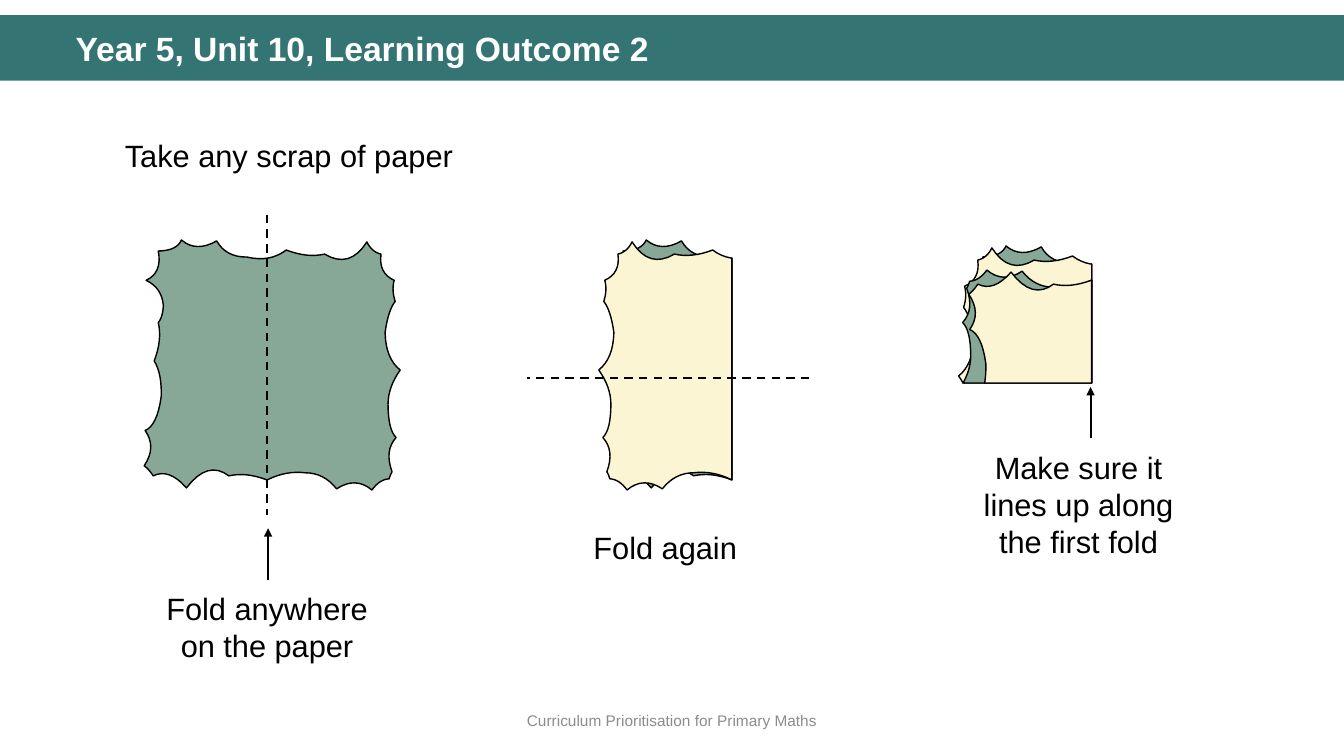
import lxml.etree
import pptx
import pptx.dml.color
import pptx.enum.dml
import pptx.enum.shapes
import pptx.enum.text
import pptx.oxml
import pptx.oxml.ns
import pptx.util

Pt = pptx.util.Pt
ALIGN = pptx.enum.text.PP_ALIGN
FONT = "Arial"
BLACK, WHITE, TEAL, GREY = "000000", "FFFFFF", "347574", "8C8C8C"
GREEN, CREAM = "87A896", "FBF5D4"
SLIDE_W, SLIDE_H = 960, 540
FOLD_X, FOLD_Y = 87.8, 97.9

# Torn edge, clockwise: (corner x, corner y, middle of the arc to the next corner x, y)
TORN_EDGE = [
    (26.6, 0, 38.2, 4.7), (51.8, 0.7, 60.5, 9.4), (73.4, 12.2, 88.6, 12.9),
    (101.5, 7.2, 115.9, 10.8), (128.9, 10.1, 145.4, 13.3), (159.1, 1.4, 163.4, 7.2),
    (169.2, 10.1, 170.6, 21.6), (178.6, 28.8, 177.8, 36), (179.3, 43.9, 175, 52.6),
    (172.1, 66.2, 175, 82.1), (182.9, 92.9, 176.4, 105.1), (174.2, 117.4, 175.7, 132.5),
    (180, 141.1, 175, 151.9), (177.1, 165.6, 176, 167.8), (175, 170.6, 168.5, 172.8),
    (162.7, 178.6, 150.5, 173.5), (137.5, 177.8, 127.4, 169.2), (115.2, 166.3, 101.5, 166.7),
    (87.8, 171.4, 73.4, 167.8), (60.5, 168.5, 45.4, 164.9), (30.2, 177.1, 18, 167.8),
    (6.5, 168.5, 3.2, 164.2), (0, 161.3, 4.7, 148.3), (0.7, 136.1, 7.9, 128.2),
    (12.2, 111.6, 11.2, 97.2), (7.2, 86.4, 10.8, 72), (10.1, 59, 12.6, 54),
    (13.7, 46.8, 10.1, 36), (1.4, 28.8, 9.4, 20.9), (10.1, 7.9, 20.9, 5.8),
]


def rgb(hex_colour):
    return pptx.dml.color.RGBColor.from_string(hex_colour)


def torn_outline(steps=8):
    """Return the points of the whole scrap, with each arc cut into short lines."""
    points = []
    for (ax, ay, mx, my), (bx, by, *_) in zip(TORN_EDGE, TORN_EDGE[1:] + TORN_EDGE[:1]):
        cx, cy = 2 * mx - (ax + bx) / 2, 2 * my - (ay + by) / 2
        for i in range(steps):
            t = i / steps
            u = 1 - t
            points.append((u * u * ax + 2 * u * t * cx + t * t * bx,
                           u * u * ay + 2 * u * t * cy + t * t * by))
    return points


def cut(points, axis, at, side):
    """Keep the part below (side -1) or above (side 1) the value at on an axis."""
    kept = []
    for a, b in zip(points, points[1:] + points[:1]):
        da, db = side * (a[axis] - at), side * (b[axis] - at)
        if da >= 0:
            kept.append(a)
        if da * db < 0:
            t = da / (da - db)
            kept.append(tuple(p + t * (q - p) for p, q in zip(a, b)))
    return kept


def flip(points, axis, at):
    return [tuple(2 * at - v if i == axis else v for i, v in enumerate(p)) for p in points]


def add_paper(slide, x, y, points, colour):
    path = [(Pt(x + px), Pt(y + py)) for px, py in points]
    builder = slide.shapes.build_freeform(*path[0])
    builder.add_line_segments(path[1:], close=True)
    sp = builder.convert_to_shape()
    sp.shadow.inherit = False
    sp.fill.solid()
    sp.fill.fore_color.rgb = rgb(colour)
    sp.line.color.rgb = rgb(BLACK)
    sp.line.width = Pt(1)


def add_line(slide, x1, y1, x2, y2):
    line = slide.shapes.add_connector(
        pptx.enum.shapes.MSO_CONNECTOR.STRAIGHT, Pt(x1), Pt(y1), Pt(x2), Pt(y2))
    line.line.color.rgb = rgb(BLACK)
    line.line.width = Pt(1.5)
    lxml.etree.SubElement(line._element.spPr, pptx.oxml.ns.qn("a:effectLst"))
    return line


def add_fold_line(slide, x1, y1, x2, y2):
    line = add_line(slide, x1, y1, x2, y2)
    line.line.dash_style = pptx.enum.dml.MSO_LINE.DASH


def add_arrow_up(slide, x, y, length=36.7):
    arrow = add_line(slide, x, y, x, y - length)
    ln = arrow.line._get_or_add_ln()
    lxml.etree.SubElement(ln, pptx.oxml.ns.qn("a:tailEnd"), type="triangle")


def add_text(slide, x, y, w, h, text, size=22, colour=BLACK, align=ALIGN.CENTER):
    tf = slide.shapes.add_textbox(Pt(x), Pt(y), Pt(w), Pt(h)).text_frame
    tf.word_wrap = True
    p = tf.paragraphs[0]
    p.text = text
    p.alignment = align
    p.font.name, p.font.size, p.font.color.rgb = FONT, Pt(size), rgb(colour)
    return tf


def add_header(slide, x, y, w, h):
    title = slide.shapes.title
    band = slide.shapes.add_shape(
        pptx.enum.shapes.MSO_SHAPE.RECTANGLE, Pt(x), Pt(y), Pt(w), Pt(h))
    band.shadow.inherit = False
    band.fill.solid()
    band.fill.fore_color.rgb = rgb(TEAL)
    band.line.fill.background()
    title._element.addprevious(band._element)

    title.left, title.top = Pt(x + 46.8), Pt(y + 8.6)
    title.width, title.height = Pt(w - 73), Pt(33.8)
    tf = title.text_frame
    tf.auto_size = pptx.enum.text.MSO_AUTO_SIZE.NONE
    tf.vertical_anchor = pptx.enum.text.MSO_ANCHOR.TOP
    p = tf.paragraphs[0]
    p.text = "Year 5, Unit 10, Learning Outcome 2"
    p.alignment = ALIGN.LEFT
    p.line_spacing = 0.9
    p.font.name, p.font.size, p.font.bold = FONT, Pt(24), True
    p.font.color.rgb = rgb(WHITE)


def add_flat_scrap(slide, x, y, scrap):
    add_text(slide, x - 20.9, y - 77.1, 279.4, 33.8, "Take any scrap of paper", align=ALIGN.LEFT)
    add_paper(slide, x, y, scrap, GREEN)
    add_fold_line(slide, x + FOLD_X, y - 18, x + FOLD_X, y + 196.5)
    add_arrow_up(slide, x + 88.5, y + 242.6)
    add_text(slide, x + 8.6, y + 246.2, 158.4, 87.1, "Fold anywhere on the paper")


def add_first_fold(slide, x, y, back, front):
    add_paper(slide, x, y, back, GREEN)
    add_paper(slide, x, y, front, CREAM)
    add_fold_line(slide, x + 143.2, y + 98.6, x - 58.4, y + 98.6)
    add_text(slide, x - 39, y + 203, 158.4, 33.8, "Fold again")


def add_second_fold(slide, x, y, back, front):
    for layer, colour in ((back, GREEN), (front, CREAM)):
        add_paper(slide, x, y, cut(layer, 1, FOLD_Y, -1), colour)
    for layer, colour in ((front, GREEN), (back, CREAM)):
        add_paper(slide, x, y, flip(cut(layer, 1, FOLD_Y, 1), 1, FOLD_Y), colour)
    add_arrow_up(slide, x + 87, y + 137.5)
    add_text(slide, x - 0.8, y + 141.1, 158.4, 87.1, "Make sure it lines up along the first fold")


def add_footer(slide, x, y, w, h):
    tf = add_text(slide, x, y, w, h, "Curriculum Prioritisation for Primary Maths", 11, GREY)
    tf.vertical_anchor = pptx.enum.text.MSO_ANCHOR.MIDDLE


def main():
    prs = pptx.Presentation()
    prs.slide_width, prs.slide_height = Pt(SLIDE_W), Pt(SLIDE_H)
    slide = prs.slides.add_slide(prs.slide_layouts[5])
    scrap = torn_outline()
    back = cut(scrap, 0, FOLD_X, -1)
    front = flip(cut(scrap, 0, FOLD_X, 1), 0, FOLD_X)

    add_header(slide, 0, 10.8, SLIDE_W, 46.8)
    add_flat_scrap(slide, 103, 171.4, scrap)
    add_first_fold(slide, 435, 171.4, back, front)
    add_second_fold(slide, 692, 175.7, back, front)
    add_footer(slide, 0, 500.4, SLIDE_W, 28.8)
    prs.save("out.pptx")


if __name__ == "__main__":
    main()
